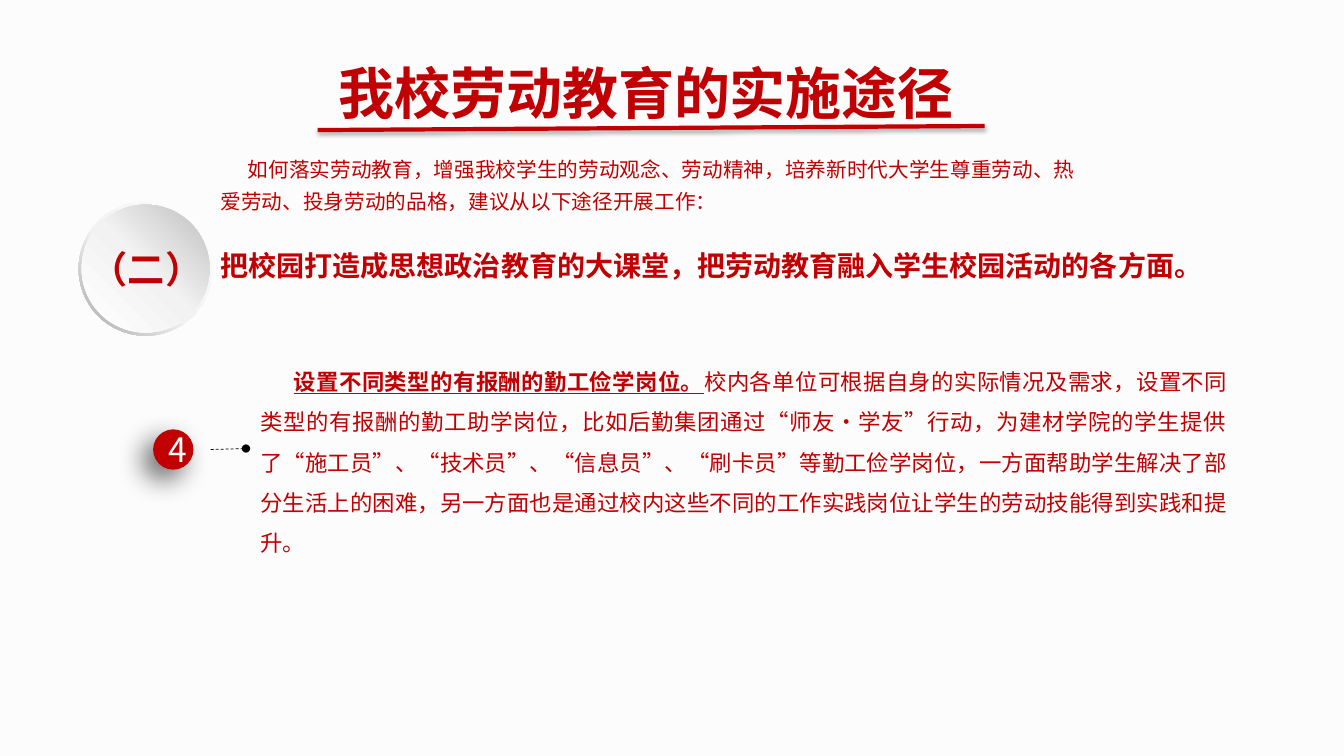
import copy

import pptx
import pptx.dml.color
import pptx.enum.dml
import pptx.enum.shapes
import pptx.enum.text
import pptx.oxml
import pptx.oxml.ns
import pptx.util

Pt = pptx.util.Pt
qn = pptx.oxml.ns.qn
color = pptx.dml.color.RGBColor.from_string
Shape = pptx.enum.shapes.MSO_SHAPE
Align = pptx.enum.text.PP_ALIGN
Anchor = pptx.enum.text.MSO_ANCHOR
FONT = "Noto Sans CJK SC"
RED = "C00002"


def write(para, text, size, ink=RED, **formats):
    """Add a run whose Latin and East Asian fonts are the same."""
    span = para.add_run()
    span.text = text
    span.font.color.rgb = color(ink)
    for name, value in {"name": FONT, "size": Pt(size), **formats}.items():
        setattr(span.font, name, value)
    east_asian = span.font._element.makeelement(qn("a:ea"), {"typeface": FONT})
    span.font._element.append(east_asian)


def set_shadow(shape, opacity=0, blur=0, distance=0, angle=0):
    """Give the shape a black shadow, or none when opacity is zero."""
    for effects in shape._element.spPr.findall(qn("a:effectLst")):
        shape._element.spPr.remove(effects)
    shadow = (
        f'<a:outerShdw blurRad="{Pt(blur)}" dist="{Pt(distance)}" dir="{angle * 60000}" '
        f'algn="ctr" rotWithShape="0"><a:srgbClr val="000000">'
        f'<a:alpha val="{opacity * 1000}"/></a:srgbClr></a:outerShdw>'
    ) if opacity else ""
    shape._element.spPr.append(pptx.oxml.parse_xml(
        f'<a:effectLst {pptx.oxml.ns.nsdecls("a")}>{shadow}</a:effectLst>'))


deck = pptx.Presentation()
deck.slide_width, deck.slide_height = Pt(960), Pt(540)
page = deck.slides.add_slide(deck.slide_layouts[1])
page.background.fill.solid()
page.background.fill.fore_color.rgb = color("FCFCFC")

# Title and body
title, body = page.placeholders
for holder, place in ((title, (219.6, 38.2, 483.8, 55.4)),
                      (body, (185.8, 253.4, 691.2, 116.6))):
    holder.left, holder.top, holder.width, holder.height = map(Pt, place)
    holder.text_frame.auto_size = pptx.enum.text.MSO_AUTO_SIZE.NONE
    holder.text_frame.vertical_anchor = Anchor.TOP
title_para = title.text_frame.paragraphs[0]
title_para.alignment = Align.CENTER
write(title_para, "我校劳动教育的实施途径", 40, bold=True)

for side in ("left", "top", "right", "bottom"):
    setattr(body.text_frame, f"margin_{side}", 0)
body_para = body.text_frame.paragraphs[0]
body_para.alignment = Align.JUSTIFY
body_para.line_spacing = 1.5
body_para.space_before = Pt(0)
properties = body_para._p.get_or_add_pPr()
properties.set("marL", "0")
properties.set("indent", str(Pt(24)))
properties.append(properties.makeelement(qn("a:buNone"), {}))
write(body_para, "设置不同类型的有报酬的勤工俭学岗位。", 16, bold=True, underline=True)
write(body_para, "校内各单位可根据自身的实际情况及需求，设置不同类型的有报酬的勤工助学岗位，"
      "比如后勤集团通过“师友•学友”行动，为建材学院的学生提供了“施工员”、“技术员”、"
      "“信息员”、“刷卡员”等勤工俭学岗位，一方面帮助学生解决了部分生活上的困难，"
      "另一方面也是通过校内这些不同的工作实践岗位让学生的劳动技能得到实践和提升。", 16)

# Section badge
badge = page.shapes.add_group_shape()
for kind, left, top, size, stops, angle in (
        (Shape.DONUT, 56.2, 144, 95.8, ((0, "FFFFFF"), (0.55, "F2F2F2"), (1, "A6A6A6")), 225),
        (Shape.OVAL, 58.3, 146.2, 91.4, ((0, "FFFFFF"), (0.51, "F2F2F2"), (1, "BFBFBF")), 45)):
    disc = badge.shapes.add_shape(kind, Pt(left), Pt(top), Pt(size), Pt(size))
    disc.shadow.inherit = False
    disc.line.fill.background()
    if kind == Shape.DONUT:
        disc.adjustments[0] = 0.05
    disc.fill.gradient()
    disc.fill.gradient_angle = angle
    stop_list = disc._element.spPr.find(".//" + qn("a:gsLst"))
    stop_list.append(copy.deepcopy(stop_list[0]))
    for stop, (position, ink) in zip(disc.fill.gradient_stops, stops):
        stop.position = position
        stop.color.rgb = color(ink)

# Text boxes
for shapes, place, text, size, bold, wrap, spacing, indent in (
        (page.shapes, (150.5, 103, 630.7, 53.3),
         "如何落实劳动教育，增强我校学生的劳动观念、劳动精神，培养新时代大学生尊重劳动、"
         "热爱劳动、投身劳动的品格，建议从以下途径开展工作：", 14.7, False, True, 1.3, 19.5),
        (page.shapes, (150.5, 177.8, 714.2, 27.4),
         "把校园打造成思想政治教育的大课堂，把劳动教育融入学生校园活动的各方面。",
         20, True, False, Pt(20), 0),
        (badge.shapes, (57.6, 172.1, 94.3, 39.6), "（二）", 26.6, True, False, 1.0, 0)):
    box = shapes.add_textbox(*map(Pt, place))
    box.text_frame.word_wrap = wrap
    para = box.text_frame.paragraphs[0]
    para.line_spacing = spacing
    para._p.get_or_add_pPr().set("indent", str(Pt(indent)))
    write(para, text, size, bold=bold)

# Item number
number = page.shapes.add_shape(Shape.OVAL, Pt(109.4), Pt(306.7), Pt(28.8), Pt(28.8))
number.fill.solid()
number.fill.fore_color.rgb = color(RED)
number.line.fill.background()
set_shadow(number, 60, 20, 10, 135)
number.text_frame.vertical_anchor = Anchor.MIDDLE
number_para = number.text_frame.paragraphs[0]
number_para.alignment = Align.CENTER
write(number_para, "4", 24, "FFFFFF")

# Lines
lines = []
for ends, ink, width in (((150.5, 321.1, 175.7, 320.4), "000000", 0.5),
                         ((226.8, 92.9, 703.4, 90), RED, 3)):
    line = page.shapes.add_connector(
        pptx.enum.shapes.MSO_CONNECTOR.STRAIGHT, *map(Pt, ends))
    line.line.color.rgb = color(ink)
    line.line.width = Pt(width)
    lines.append(line)
pointer, underline = lines
pointer.line.dash_style = pptx.enum.dml.MSO_LINE.DASH
outline = pointer.line._get_or_add_ln()
outline.append(outline.makeelement(qn("a:tailEnd"), {"type": "oval"}))
set_shadow(pointer)
set_shadow(underline, 35, 3.1, 1.8, 90)

deck.save("out.pptx")
